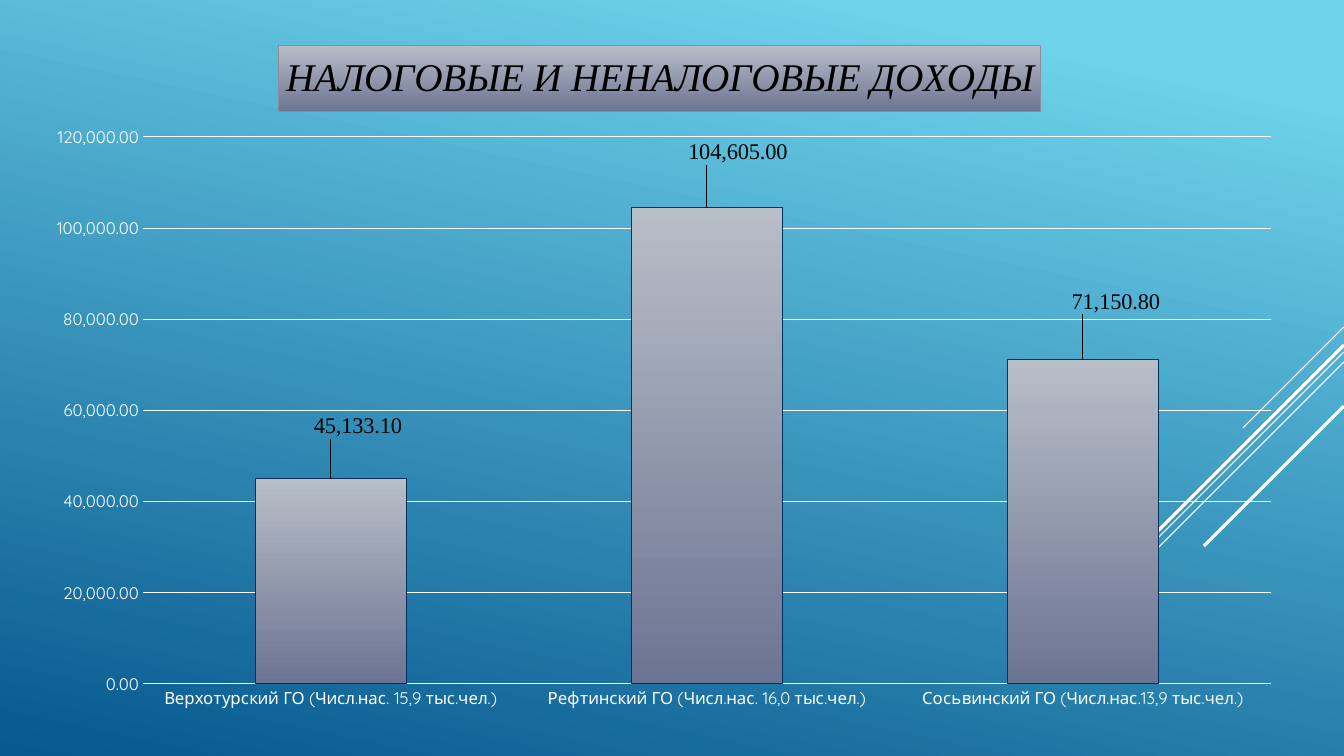
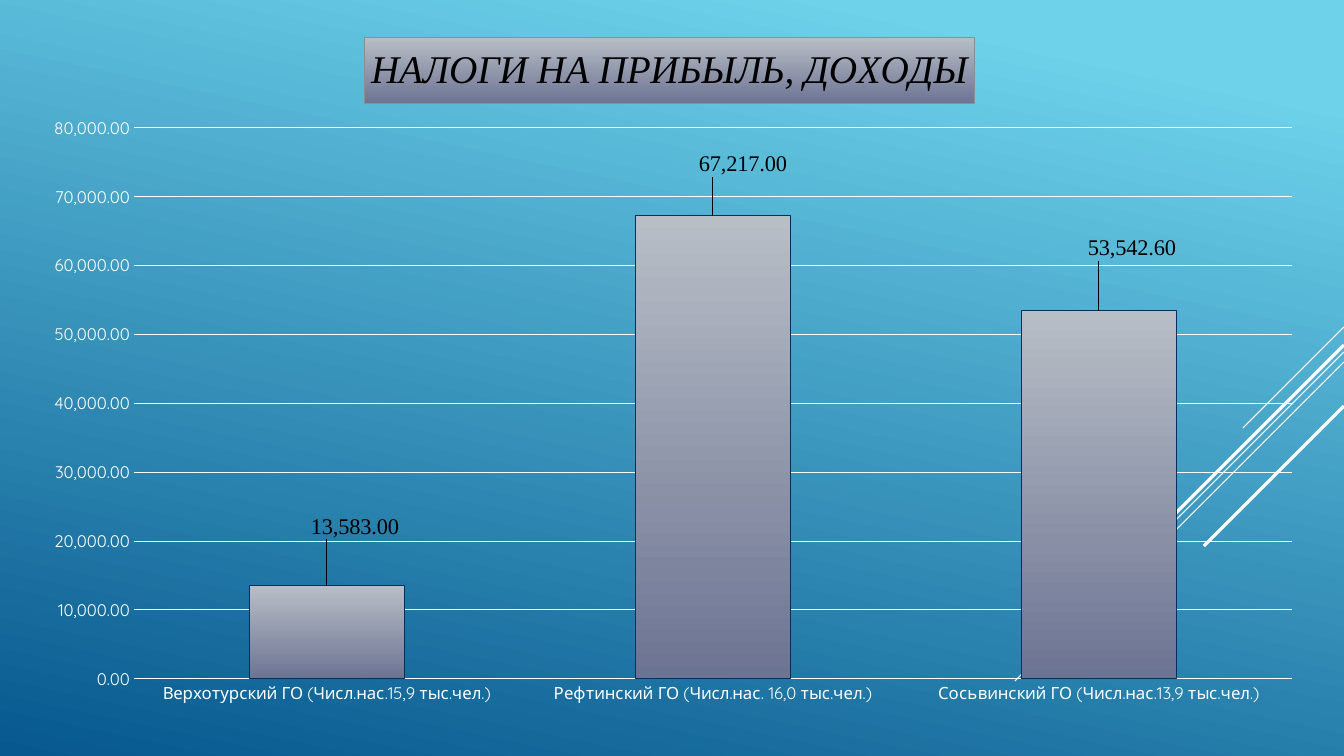
from dataclasses import dataclass

from lxml.etree import SubElement
from pptx import Presentation
from pptx.chart.data import CategoryChartData
from pptx.dml.color import RGBColor as RGB
from pptx.enum.chart import XL_CHART_TYPE as CT, XL_LABEL_POSITION as LP
from pptx.enum.chart import XL_TICK_MARK as TM
from pptx.enum.shapes import MSO_CONNECTOR as MC
from pptx.oxml import parse_xml
from pptx.oxml.ns import nsdecls, qn
from pptx.util import Pt

W, H = 1344, 756
EMU_PER_PX = 12192000 / W


@dataclass(frozen=True)
class Theme:
    white: str = "FFFFFF"
    black: str = "000000"
    bg: tuple = ("6ED2EB", "06588E")
    metal: tuple = ("B8BEC6", "6C7493")
    bar_edge: str = "052E5F"
    frame: str = "8F8C96"
    body: str = "Quicksand"
    serif: str = "Times New Roman"
    base_pt: int = 10
    axis_pt: int = 12
    label_pt: int = 16
    title_pt: int = 28
    thin: float = 0.75
    thick: float = 2.25
    num_fmt: str = "#,##0.00"


T = Theme()

# Diagonal rays from the right edge: start y, run, weight
RAYS = [
    (327, 101, T.thin),
    (352, 329, T.thin),
    (362, 209, T.thin),
    (345, 192, T.thick),
    (406, 140, T.thick),
]

# Boxes are left, top, width, height; plot, title and nudges are relative to the chart
CHARTS = [
    dict(
        title="НАЛОГОВЫЕ И НЕНАЛОГОВЫЕ ДОХОДЫ",
        box=(32, 26, 1264, 696), plot=(111, 111, 1128, 547), title_at=(247, 19),
        cats=["Верхотурский ГО (Числ.нас. 15,9 тыс.чел.)",
              "Рефтинский ГО (Числ.нас. 16,0 тыс.чел.)",
              "Сосьвинский ГО (Числ.нас.13,9 тыс.чел.)"],
        vals=[45133.1, 104605, 71150.8], top=120000, step=20000,
        nudges=[(27, -35), (31, -38), (33, -41)],
    ),
    dict(
        title="НАЛОГИ НА ПРИБЫЛЬ, ДОХОДЫ",
        box=(28, 18, 1289, 700), plot=(106, 110, 1158, 551), title_at=(336, 19),
        cats=["Верхотурский ГО (Числ.нас.15,9 тыс.чел.)",
              "Рефтинский ГО (Числ.нас. 16,0 тыс.чел.)",
              "Сосьвинский ГО (Числ.нас.13,9 тыс.чел.)"],
        vals=[13583, 67217, 53542.6], top=80000, step=10000,
        nudges=[(28, -42), (30, -35), (33, -45)],
    ),
]


def px(n):
    return round(n * EMU_PER_PX)


def set_font(font, size, color, name, italic=None):
    font.size, font.name = Pt(size), name
    font.bold, font.italic = False, italic
    font.color.rgb = RGB.from_string(color)


def set_line(line, color, weight):
    line.color.rgb = RGB.from_string(color)
    line.width = Pt(weight)


def set_gradient(fill, colors, angle, start=0):
    """Two-stop gradient; the angle runs clockwise."""
    fill.gradient()
    fill.gradient_angle = 360 - angle
    for stop, color, pos in zip(fill.gradient_stops, colors, (start, 1)):
        stop.color.rgb = RGB.from_string(color)
        stop.position = pos


def set_layout(el, index, size, place, kind=""):
    """Give a chart part a manual layout, as fractions of the chart size."""
    old = el.find(qn("c:layout"))
    if old is not None:
        el.remove(old)
    layout = parse_xml(f"<c:layout {nsdecls('c')}><c:manualLayout/></c:layout>")
    manual = layout[0]
    parts = []
    if kind == "plot":
        parts.append(("layoutTarget", "inner"))
    if kind:
        parts += [("xMode", "edge"), ("yMode", "edge")]
    parts += [(k, f"{n / total:.4f}") for k, n, total in zip("xywh", place, size * 2)]
    for tag, val in parts:
        SubElement(manual, qn(f"c:{tag}")).set("val", val)
    el.insert(index, layout)


def add_rays(slide):
    for y, run, weight in RAYS:
        c = slide.shapes.add_connector(MC.STRAIGHT, px(W), px(y), px(W - run), px(y + run))
        set_line(c.line, T.white, weight)
        SubElement(c._element.spPr, qn("a:effectLst"))


def style_title(chart, text, size, place):
    chart.has_title = True
    title = chart.chart_title
    p = title.text_frame.paragraphs[0]
    p.text = text
    set_font(p.font, T.title_pt, T.black, T.serif, italic=True)
    set_gradient(title.format.fill, T.metal, 90)
    set_line(title.format.line, T.frame, T.thin)
    set_layout(title._element, 1, size, place, "title")


def style_axes(chart, top, step):
    val = chart.value_axis
    val.minimum_scale, val.maximum_scale, val.major_unit = 0, top, step
    val.tick_labels.number_format = T.num_fmt
    val.tick_labels.number_format_is_linked = False
    set_line(val.major_gridlines.format.line, T.white, T.thin)
    for axis in (val, chart.category_axis):
        axis.major_tick_mark = axis.minor_tick_mark = TM.NONE
        axis.format.line.fill.background()
        set_font(axis.tick_labels.font, T.axis_pt, T.white, T.body)


def style_labels(plot, size, nudges):
    plot.has_data_labels = True
    labels = plot.data_labels
    labels.show_value = True
    labels.number_format, labels.number_format_is_linked = T.num_fmt, False
    set_font(labels.font, T.label_pt, T.black, T.serif)
    ser = plot.series[0]
    for i, nudge in enumerate(nudges):
        label = ser.points[i].data_label
        set_font(label.font, T.label_pt, T.black, T.serif)
        label.position = LP.OUTSIDE_END
        el = ser._element.xpath(f'.//c:dLbl[c:idx/@val="{i}"]')[0]
        set_layout(el, 1, size, nudge)
        # Thin frame round the value
        el.insert(2, parse_xml(
            f'<c:spPr {nsdecls("c", "a")}><a:noFill/><a:ln w="6350"><a:solidFill>'
            f'<a:srgbClr val="{T.frame}"/></a:solidFill></a:ln></c:spPr>'))


def add_column_chart(slide, title, box, plot, title_at, cats, vals, top, step, nudges):
    data = CategoryChartData(number_format=T.num_fmt)
    data.categories = cats
    data.add_series(title, vals)
    frame = slide.shapes.add_chart(CT.COLUMN_CLUSTERED, *map(px, box), data)
    chart, size = frame.chart, box[2:]
    set_font(chart.font, T.base_pt, T.white, T.body)
    chart.has_legend = False
    style_title(chart, title, size, title_at)
    style_axes(chart, top, step)
    set_layout(chart.element.xpath(".//c:plotArea")[0], 0, size, plot, "plot")

    # Columns
    columns = chart.plots[0]
    columns.gap_width, columns.vary_by_categories = 150, False
    fmt = columns.series[0].format
    set_gradient(fmt.fill, T.metal, 90)
    set_line(fmt.line, T.bar_edge, T.thin)
    style_labels(columns, size, nudges)


def main():
    prs = Presentation()
    prs.slide_width, prs.slide_height = px(W), px(H)
    set_gradient(prs.slide_master.background.fill, T.bg, 102, start=0.1)
    for chart in CHARTS:
        slide = prs.slides.add_slide(prs.slide_layouts[6])
        add_rays(slide)
        add_column_chart(slide, **chart)
    prs.save("out.pptx")


if __name__ == "__main__":
    main()
